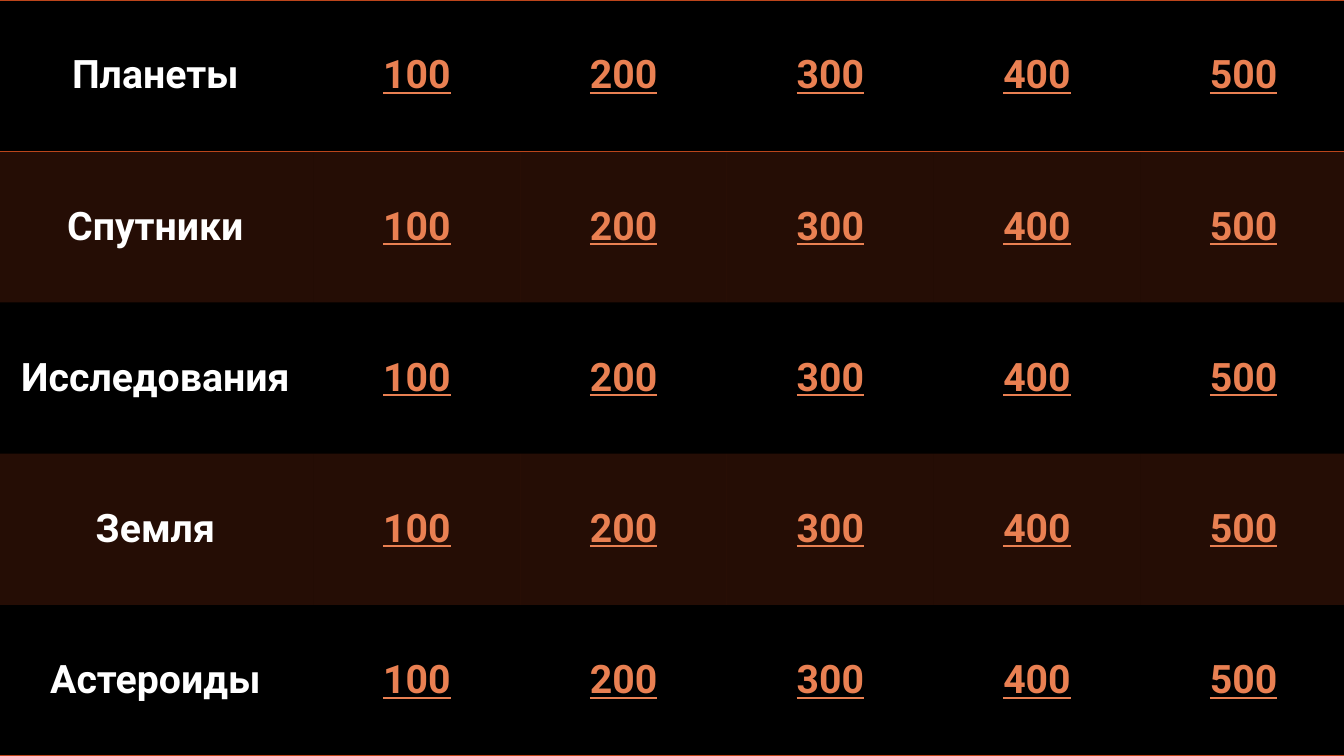
import lxml.etree
import pptx
import pptx.dml.color
import pptx.enum.text
import pptx.oxml.ns
import pptx.util

PX = 9144
BLACK = pptx.dml.color.RGBColor(0x00, 0x00, 0x00)
WHITE = pptx.dml.color.RGBColor(0xFF, 0xFF, 0xFF)
ORANGE = pptx.dml.color.RGBColor(0xE9, 0x80, 0x52)
RUST = pptx.dml.color.RGBColor(0xBC, 0x45, 0x1B)
NO_GRID_STYLE = "{2D5ABB26-0587-4C30-8999-92F81FD0307C}"

TOPICS = ["Планеты", "Спутники", "Исследования", "Земля", "Астероиды"]
POINTS = ["100", "200", "300", "400", "500"]
COLUMN_WIDTHS = [314] + [205] * len(POINTS)
ROW_HEIGHT = 150
RULED_SIDES = {0: ["a:lnT", "a:lnB"], len(TOPICS) - 1: ["a:lnB"]}


def add_element(parent, tag, **attributes):
    return lxml.etree.SubElement(parent, pptx.oxml.ns.qn(tag), **attributes)


presentation = pptx.Presentation()
presentation.slide_width = 1333 * PX
presentation.slide_height = 750 * PX
slide = presentation.slides.add_slide(presentation.slide_layouts[6])
slide.background.fill.solid()
slide.background.fill.fore_color.rgb = BLACK

board = slide.shapes.add_table(
    len(TOPICS), len(COLUMN_WIDTHS), -3 * PX, 0,
    sum(COLUMN_WIDTHS) * PX, len(TOPICS) * ROW_HEIGHT * PX,
).table
board.first_row = False
board.horz_banding = False
board._tbl.tblPr.find(pptx.oxml.ns.qn("a:tableStyleId")).text = NO_GRID_STYLE

for column, width in zip(board.columns, COLUMN_WIDTHS):
    column.width = width * PX

for row_index, topic in enumerate(TOPICS):
    board.rows[row_index].height = ROW_HEIGHT * PX
    for column_index, label in enumerate([topic] + POINTS):
        cell = board.cell(row_index, column_index)
        cell.text = label
        cell.vertical_anchor = pptx.enum.text.MSO_ANCHOR.MIDDLE

        paragraph = cell.text_frame.paragraphs[0]
        paragraph.alignment = pptx.enum.text.PP_ALIGN.CENTER
        paragraph.font.name = "Roboto"
        paragraph.font.size = pptx.util.Pt(28)
        paragraph.font.bold = True
        paragraph.font.underline = column_index > 0
        paragraph.font.color.rgb = ORANGE if column_index else WHITE

        cell_properties = cell._tc.get_or_add_tcPr()
        for side in RULED_SIDES.get(row_index, []):
            rule = add_element(cell_properties, side, w=str(pptx.util.Pt(1)))
            rule_fill = add_element(rule, "a:solidFill")
            add_element(rule_fill, "a:srgbClr", val=str(RUST))

        if row_index % 2:
            cell.fill.solid()
            cell.fill.fore_color.rgb = RUST
            tint = cell_properties.find(".//" + pptx.oxml.ns.qn("a:srgbClr"))
            add_element(tint, "a:alpha", val="20000")
        else:
            cell.fill.background()

presentation.save("out.pptx")
